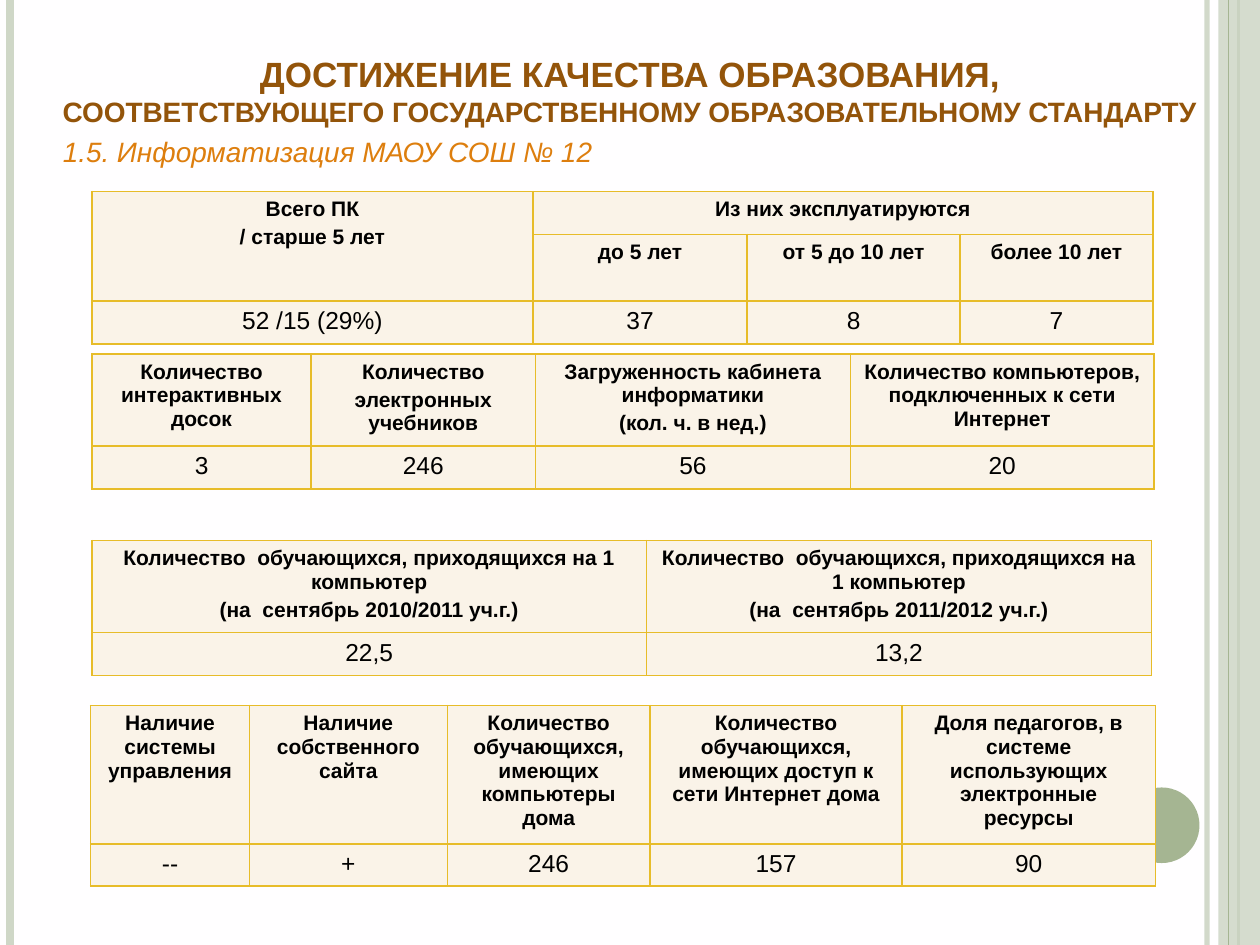
from lxml import etree
from pptx import Presentation
from pptx import util as u
from pptx.dml.color import RGBColor
from pptx.enum import shapes, text
from pptx.oxml.ns import qn

PALE = RGBColor(0xCF, 0xD7, 0xC7)
GREEN = RGBColor(0xA5, 0xB5, 0x92)
GOLD = RGBColor(0xE7, 0xBC, 0x29)
CREAM = RGBColor(0xFA, 0xF3, 0xE8)
BLACK = RGBColor(0, 0, 0)
BROWN = RGBColor(0x93, 0x54, 0x0A)
ORANGE = RGBColor(0xDD, 0x7E, 0x0E)
WHITE = RGBColor(0xFF, 0xFE, 0xFF)

TITLE = [
    ("ДОСТИЖЕНИЕ КАЧЕСТВА ОБРАЗОВАНИЯ,", 20),
    ("СООТВЕТСТВУЮЩЕГО ГОСУДАРСТВЕННОМУ ОБРАЗОВАТЕЛЬНОМУ СТАНДАРТУ", 16),
]
TOPIC = "1.5. Информатизация МАОУ СОШ № 12"
PUPILS = "Количество  обучающихся, приходящихся на 1 компьютер\n(на  сентябрь {} уч.г.)"

TABLES = [
    dict(at=(0.73, 1.52), cols=(3.5, 1.7, 1.69, 1.53), rows=(0.34, 0.53, 0.34),
         spans=[(0, 0, 1, 0), (0, 1, 0, 3)],
         cells=[["Всего ПК\n/ старше 5 лет", "Из них эксплуатируются", None, None],
                [None, "до 5 лет", "от 5 до 10 лет", "более 10 лет"],
                ["52 /15 (29%)", "37", "8", "7"]]),
    dict(at=(0.73, 2.81), cols=(1.74, 1.78, 2.5, 2.41), rows=(0.73, 0.34), spans=[],
         cells=[["Количество интерактивных досок", "Количество\nэлектронных учебников",
                 "Загруженность кабинета информатики\n(кол. ч. в нед.)",
                 "Количество компьютеров, подключенных к сети Интернет"],
                ["3", "246", "56", "20"]]),
    dict(at=(0.73, 4.29), cols=(4.4, 4.01), rows=(0.73, 0.34), spans=[],
         cells=[[PUPILS.format("2010/2011"), PUPILS.format("2011/2012")],
                ["22,5", "13,2"]]),
    dict(at=(0.72, 5.6), cols=(1.26, 1.57, 1.61, 2, 2.01), rows=(1.1, 0.33), spans=[],
         cells=[["Наличие системы управления", "Наличие собственного сайта",
                 "Количество обучающихся, имеющих компьютеры дома",
                 "Количество обучающихся, имеющих доступ к сети Интернет дома",
                 "Доля педагогов, в системе использующих электронные ресурсы"],
                ["--", "+", "246", "157", "90"]]),
]

RULES = [(9.58, 3, PALE, 93), (0.08, 4.5, PALE, 100), (9.83, 1.5, GREEN, 100)]
BAND = (9.67, 0, 0.33, 7.5)
EDGE = (9.75, 0.75, GREEN, 100)
DOT = (8.92, 6.25, 0.6, 0.6)


def fade(fill, rate):
    tag = fill._xPr.find(".//" + qn("a:srgbClr"))
    etree.SubElement(tag, qn("a:alpha"), val=str(rate * 1000))


def rule(x, width, color, rate):
    line = slide.shapes.add_connector(
        shapes.MSO_CONNECTOR.STRAIGHT, u.Inches(x), 0, u.Inches(x), u.Inches(7.5))
    line.line.width = u.Pt(width)
    line.line.color.rgb = color
    if rate < 100:
        fade(line.line.fill, rate)
    etree.SubElement(line._element.spPr, qn("a:effectLst"))


def shape(kind, box, color):
    item = slide.shapes.add_shape(kind, *map(u.Inches, box))
    item.shadow.inherit = False
    item.fill.solid()
    item.fill.fore_color.rgb = color
    item.line.fill.background()
    return item


def style(run, size, color, **form):
    run.font.color.rgb = color
    for key, val in dict(name="Arial", size=u.Pt(size), **form).items():
        setattr(run.font, key, val)


def border(cell):
    props = cell._tc.get_or_add_tcPr()
    for i, side in enumerate(("lnL", "lnR", "lnT", "lnB")):
        line = etree.Element(qn("a:" + side), w=str(u.Pt(1)))
        fill = etree.SubElement(line, qn("a:solidFill"))
        etree.SubElement(fill, qn("a:srgbClr"), val=str(GOLD))
        props.insert(i, line)


def write(cell, words, size, bold):
    cell.text_frame.text = words
    for para in cell.text_frame.paragraphs:
        para.alignment = text.PP_ALIGN.CENTER
        para.space_before = u.Pt(size * 0.2)
        for run in para.runs:
            style(run, size, BLACK, bold=bold)


def table(at, cols, rows, spans, cells):
    box = (*at, sum(cols), sum(rows))
    grid = slide.shapes.add_table(len(rows), len(cols), *map(u.Inches, box)).table
    for col, width in zip(grid.columns, cols):
        col.width = u.Inches(width)
    for row, height in zip(grid.rows, rows):
        row.height = u.Inches(height)
    for r, line in enumerate(cells):
        head = r < len(rows) - 1
        for c, words in enumerate(line):
            cell = grid.cell(r, c)
            cell.fill.solid()
            cell.fill.fore_color.rgb = CREAM
            border(cell)
            if words:
                write(cell, words, 12 if head else 14, head)
    for top, left, end, right in spans:
        grid.cell(top, left).merge(grid.cell(end, right))


def label(top, height):
    box = slide.shapes.add_textbox(0, u.Inches(top), u.Inches(10), u.Inches(height))
    box.text_frame.word_wrap = True
    return box.text_frame.paragraphs[0]


deck = Presentation()
deck.slide_width, deck.slide_height = u.Inches(10), u.Inches(7.5)
slide = deck.slides.add_slide(deck.slide_layouts[6])
slide.background.fill.solid()
slide.background.fill.fore_color.rgb = WHITE

for item in RULES:
    rule(*item)
fade(shape(shapes.MSO_SHAPE.RECTANGLE, BAND, PALE).fill, 87)
rule(*EDGE)
shape(shapes.MSO_SHAPE.OVAL, DOT, GREEN)

for item in TABLES:
    table(**item)

para = label(0.37, 0.71)
para.alignment = text.PP_ALIGN.CENTER
for i, (words, size) in enumerate(TITLE):
    if i:
        para.add_line_break()
    run = para.add_run()
    run.text = words
    style(run, size, BROWN, bold=True)

para = label(1.02, 0.37)
para._p.get_or_add_pPr().set("marL", str(u.Inches(0.4)))
para._p.get_or_add_pPr().set("indent", "0")
run = para.add_run()
run.text = TOPIC
style(run, 16, ORANGE, italic=True)

deck.save("out.pptx")
